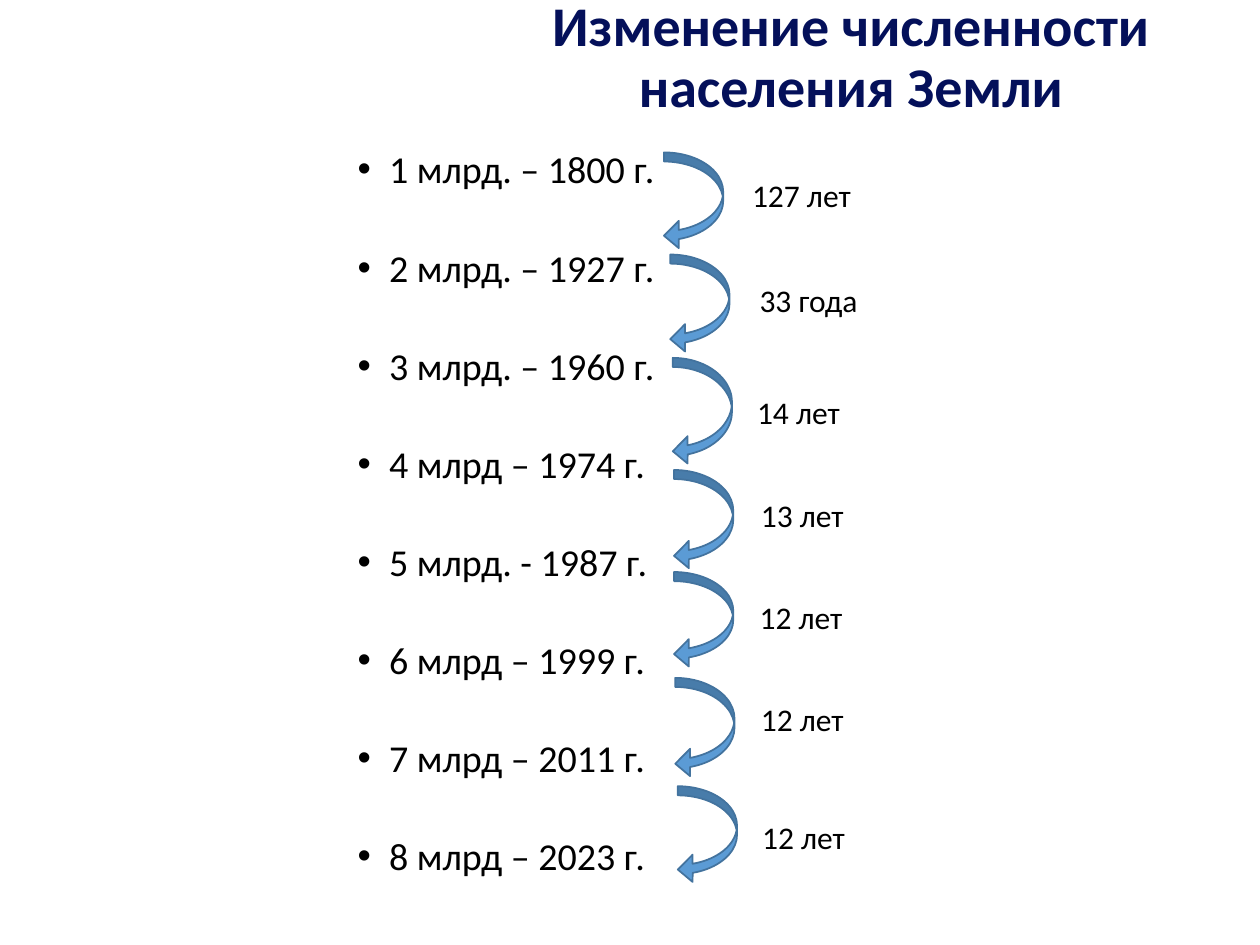
import pptx
import pptx.util
import pptx.dml.color
import pptx.enum.shapes
import pptx.enum.text
import pptx.oxml.ns
from dataclasses import dataclass
from lxml import etree

Inches = pptx.util.Inches
Pt = pptx.util.Pt
RGB = pptx.dml.color.RGBColor.from_string


@dataclass(frozen=True)
class Theme:
    font: str = "Calibri"
    title_color: str = "04105A"
    text_color: str = "000000"
    arrow_fill: str = "5B9BD5"
    arrow_line: str = "43739E"
    title_size: float = 32
    milestone_size: float = 21.7
    interval_size: float = 18


theme = Theme()


def add_run(paragraph, text, size, color, bold=False):
    run = paragraph.add_run()
    run.text = text
    run.font.name = theme.font
    run.font.size = Pt(size)
    run.font.bold = bold
    run.font.color.rgb = RGB(color)


def add_bullet(paragraph, indent):
    properties = paragraph._p.get_or_add_pPr()
    properties.set("marL", str(indent))
    properties.set("indent", str(-indent))
    for tag, key, value in (("a:buFont", "typeface", "Arial"), ("a:buChar", "char", "•")):
        etree.SubElement(properties, pptx.oxml.ns.qn(tag)).set(key, value)


prs = pptx.Presentation()
prs.slide_width, prs.slide_height = Inches(10), Inches(7.5)
slide = prs.slides.add_slide(prs.slide_layouts[5])

# Title
title = slide.shapes.title
title.left, title.top = Inches(3.51), Inches(0)
title.width, title.height = Inches(6.49), Inches(0.93)
title.text_frame.word_wrap = True
title.text_frame.vertical_anchor = pptx.enum.text.MSO_ANCHOR.MIDDLE
heading = title.text_frame.paragraphs[0]
heading.alignment = pptx.enum.text.PP_ALIGN.CENTER
heading.line_spacing = 0.9
add_run(heading, "Изменение численности населения Земли", theme.title_size, theme.title_color, bold=True)

# Population milestones
milestones = [
    "1 млрд. – 1800 г.",
    "2 млрд. – 1927 г.",
    "3 млрд. – 1960 г.",
    "4 млрд – 1974 г.",
    "5 млрд. - 1987 г.",
    "6 млрд – 1999 г.",
    "7 млрд – 2011 г.",
    "8 млрд – 2023 г.",
]
milestone_list = slide.shapes.add_textbox(Inches(2.74), Inches(0.82), Inches(4.57), Inches(6.55)).text_frame
milestone_list.word_wrap = True
for index, milestone in enumerate(milestones):
    entry = milestone_list.add_paragraph() if index else milestone_list.paragraphs[0]
    entry.line_spacing = 1.8
    entry.space_before = Pt(9.2 if index else 0)
    add_bullet(entry, Inches(0.25))
    add_run(entry, milestone, theme.milestone_size, theme.text_color)

# Intervals: arrow left, top, height; label text, left, top, width
intervals = [
    (5.27, 1.21, 0.77, "127 лет", 5.87, 1.35, 1.09),
    (5.32, 2.02, 0.78, "33 года", 5.93, 2.18, 1.06),
    (5.34, 2.84, 0.85, "14 лет", 5.91, 3.07, 0.95),
    (5.35, 3.73, 0.79, "13 лет", 5.94, 3.89, 0.95),
    (5.35, 4.54, 0.76, "12 лет", 5.93, 4.70, 0.95),
    (5.36, 5.38, 0.79, "12 лет", 5.94, 5.51, 0.95),
    (5.38, 6.24, 0.77, "12 лет", 5.95, 6.44, 0.95),
]
for arrow_left, arrow_top, arrow_height, years, years_left, years_top, years_width in intervals:
    arrow = slide.shapes.add_shape(
        pptx.enum.shapes.MSO_SHAPE.CURVED_LEFT_ARROW,
        Inches(arrow_left), Inches(arrow_top), Inches(0.47), Inches(arrow_height))
    for position, value in enumerate((0.154, 0.462, 0.25)):
        arrow.adjustments[position] = value
    arrow.shadow.inherit = False
    arrow.fill.solid()
    arrow.fill.fore_color.rgb = RGB(theme.arrow_fill)
    arrow.line.color.rgb = RGB(theme.arrow_line)
    arrow.line.width = Pt(1)

    label = slide.shapes.add_textbox(
        Inches(years_left), Inches(years_top), Inches(years_width), Inches(0.4)).text_frame
    label.word_wrap = False
    label.auto_size = pptx.enum.text.MSO_AUTO_SIZE.SHAPE_TO_FIT_TEXT
    add_run(label.paragraphs[0], years, theme.interval_size, theme.text_color)

prs.save("out.pptx")
